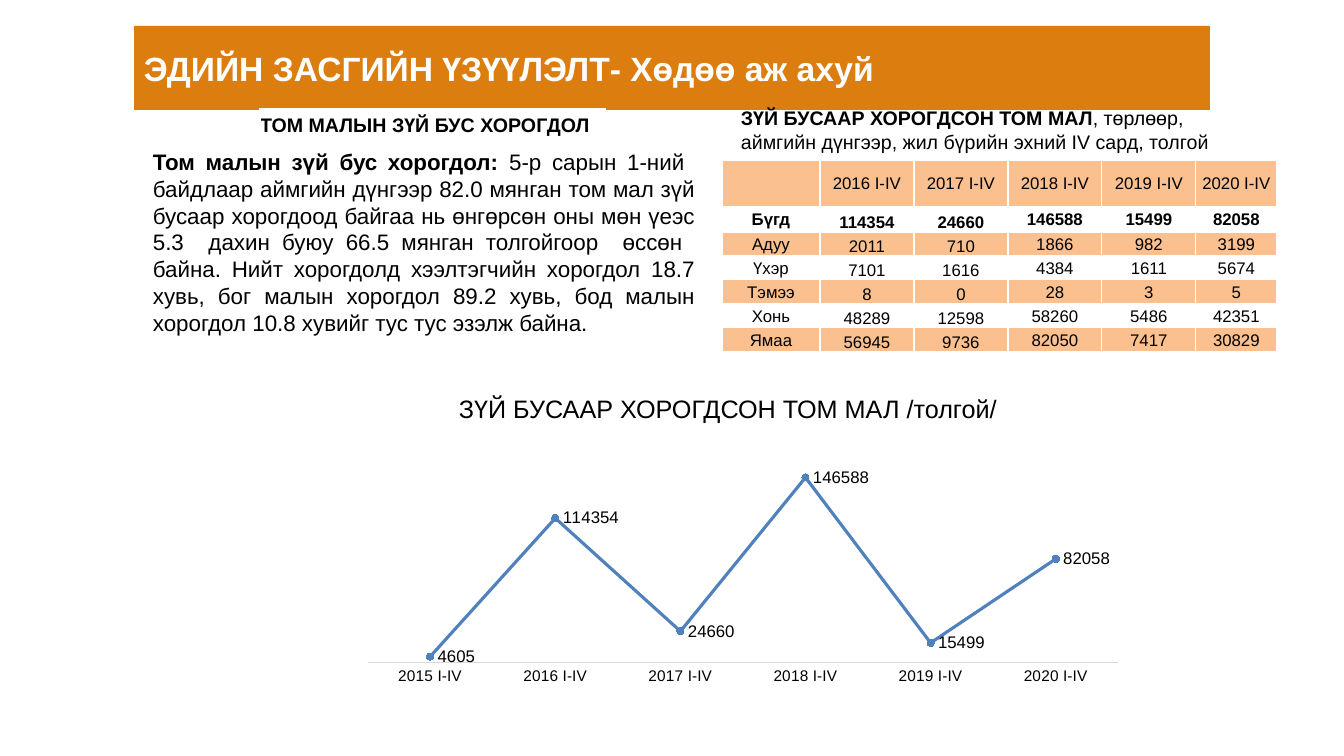
from pptx import Presentation
from pptx.chart.data import CategoryChartData
from pptx.dml.color import RGBColor
from pptx.enum.chart import XL_CHART_TYPE as ChartType, XL_LABEL_POSITION as LabelPosition
from pptx.enum.chart import XL_MARKER_STYLE as Marker, XL_TICK_MARK as Tick
from pptx.enum.text import MSO_ANCHOR as Anchor, PP_ALIGN as Align
from pptx.util import Pt

TITLE = "ЭДИЙН ЗАСГИЙН ҮЗҮҮЛЭЛТ- Хөдөө аж ахуй"
LOSS_HEADING = "ТОМ МАЛЫН ЗҮЙ БУС ХОРОГДОЛ"
LOSS_TEXT = [
    ("Том малын зүй бус хорогдол: ", True),
    ("5-р сарын 1-ний  байдлаар аймгийн дүнгээр 82.0 мянган том мал зүй бусаар "
     "хорогдоод байгаа нь өнгөрсөн оны мөн үеэс 5.3  дахин буюу 66.5 мянган "
     "толгойгоор  өссөн  байна. Нийт хорогдолд хээлтэгчийн хорогдол 18.7 хувь, "
     "бог малын хорогдол 89.2 хувь, бод малын хорогдол 10.8 хувийг тус тус "
     "эзэлж байна.", False),
]
TABLE_CAPTION = [
    ("ЗҮЙ БУСААР ХОРОГДСОН ТОМ МАЛ", True),
    (", төрлөөр, аймгийн дүнгээр, жил бүрийн эхний IV сард, толгой", False),
]
HERD_ROWS = [
    ("", "2016 I-IV", "2017 I-IV", "2018 I-IV", "2019 I-IV", "2020 I-IV"),
    ("Бүгд", "114354", "24660", "146588", "15499", "82058"),
    ("Адуу", "2011", "710", "1866", "982", "3199"),
    ("Үхэр", "7101", "1616", "4384", "1611", "5674"),
    ("Тэмээ", "8", "0", "28", "3", "5"),
    ("Хонь", "48289", "12598", "58260", "5486", "42351"),
    ("Ямаа", "56945", "9736", "82050", "7417", "30829"),
]
HERD_COLUMNS = [98, 94, 94, 94, 94, 81]
HERD_HEIGHTS = [47, 25, 24, 24, 24, 24, 24]
CHART_TITLE = "ЗҮЙ БУСААР ХОРОГДСОН ТОМ МАЛ /толгой/"
LOSSES = {"2015 I-IV": 4605, "2016 I-IV": 114354, "2017 I-IV": 24660,
          "2018 I-IV": 146588, "2019 I-IV": 15499, "2020 I-IV": 82058}

ORANGE, PEACH, BLUE, GREY = "DC7D0F", "FAC090", "4F81BD", "D9D9D9"
BLACK, WHITE = "000000", "FFFFFF"


def px(*lengths):
    return [round(length * 914400 / 100.8) for length in lengths]


def paint(target, color):
    """Give a fill or a line format one solid colour."""
    fill = target.fill if hasattr(target, "fill") else target
    fill.solid()
    fill.fore_color.rgb = RGBColor.from_string(color)


def set_font(font, size, color=BLACK, bold=False):
    font.name, font.size, font.bold = "Arial", Pt(size), bold
    font.color.rgb = RGBColor.from_string(color)


def write(frame, text, size, color=BLACK, bold=False, align=Align.LEFT):
    """Write a string, or a list of (string, bold) spans, as one paragraph."""
    para = frame.paragraphs[0]
    para.alignment = align
    for words, heavy in [(text, bold)] if isinstance(text, str) else text:
        span = para.add_run()
        span.text = words
        set_font(span.font, size, color, heavy)


def add_text(page, area, text, size, wrap=True, anchor=Anchor.TOP, **style):
    box = page.shapes.add_textbox(*px(*area))
    box.text_frame.word_wrap = wrap
    box.text_frame.vertical_anchor = anchor
    write(box.text_frame, text, size, **style)
    return box


def add_plain_table(page, left, top, widths, heights):
    """Add a table with no header style and no banding."""
    area = px(left, top, sum(widths), sum(heights))
    table = page.shapes.add_table(len(heights), len(widths), *area).table
    table.first_row = table.horz_banding = False
    for column, width in zip(table.columns, px(*widths)):
        column.width = width
    for row, height in zip(table.rows, px(*heights)):
        row.height = height
    return table


def fill_cell(cell, text, size, margins, fill=None, anchor=Anchor.MIDDLE, **style):
    cell.margin_left, cell.margin_top, cell.margin_right, cell.margin_bottom = px(*margins)
    cell.vertical_anchor = anchor
    if fill:
        paint(cell, fill)
    else:
        cell.fill.background()
    if text:
        write(cell.text_frame, text, size, **style)


def add_herd_table(page):
    table = add_plain_table(page, 722, 160, HERD_COLUMNS, HERD_HEIGHTS)
    for r, row in enumerate(HERD_ROWS):
        for c, text in enumerate(row):
            low = r > 0 and c in (1, 2)
            fill_cell(table.cell(r, c), text, 12, (1, 1, 1, 0),
                      fill=PEACH if r % 2 == 0 else None,
                      anchor=Anchor.BOTTOM if low else Anchor.MIDDLE,
                      bold=r == 1, align=Align.CENTER)


def add_loss_chart(page):
    data = CategoryChartData()
    data.categories = list(LOSSES)
    data.add_series("Series 1", list(LOSSES.values()))
    chart = page.shapes.add_chart(ChartType.LINE_MARKERS, *px(352, 456, 782, 233), data).chart
    chart.has_legend = chart.has_title = False
    set_font(chart.font, 10)
    chart.font.name = "Calibri"

    values = chart.value_axis
    values.visible = values.has_major_gridlines = False
    values.minimum_scale, values.maximum_scale = 0, 160000
    periods = chart.category_axis
    periods.major_tick_mark = periods.minor_tick_mark = Tick.NONE
    set_font(periods.tick_labels.font, 11)
    paint(periods.format.line, GREY)
    periods.format.line.width = Pt(0.75)

    plot = chart.plots[0]
    plot.vary_by_categories = False
    series = plot.series[0]
    series.smooth = False
    paint(series.format.line, BLUE)
    series.format.line.width = Pt(2.25)
    series.marker.style, series.marker.size = Marker.CIRCLE, 5
    paint(series.marker.format, BLUE)
    paint(series.marker.format.line, BLUE)
    labels = series.data_labels
    labels.show_value, labels.position = True, LabelPosition.RIGHT
    set_font(labels.font, 12)


def main():
    deck = Presentation()
    deck.slide_width, deck.slide_height = px(1344, 756)
    page = deck.slides.add_slide(deck.slide_layouts[6])

    banner = add_text(page, (134, 26, 1076, 84), TITLE, 24, anchor=Anchor.MIDDLE,
                      color=WHITE, bold=True)
    paint(banner, ORANGE)
    add_text(page, (143, 143, 562, 201), LOSS_TEXT, 16, align=Align.JUSTIFY)
    heading = add_plain_table(page, 260, 109, [345], [33])
    fill_cell(heading.cell(0, 0), LOSS_HEADING, 14, (0, 0, 0, 0), bold=True)
    add_herd_table(page)
    add_text(page, (731, 101, 529, 57), TABLE_CAPTION, 14)
    add_text(page, (449, 388, 564, 40), CHART_TITLE, 18, wrap=False)
    add_loss_chart(page)
    deck.save("out.pptx")


if __name__ == "__main__":
    main()
